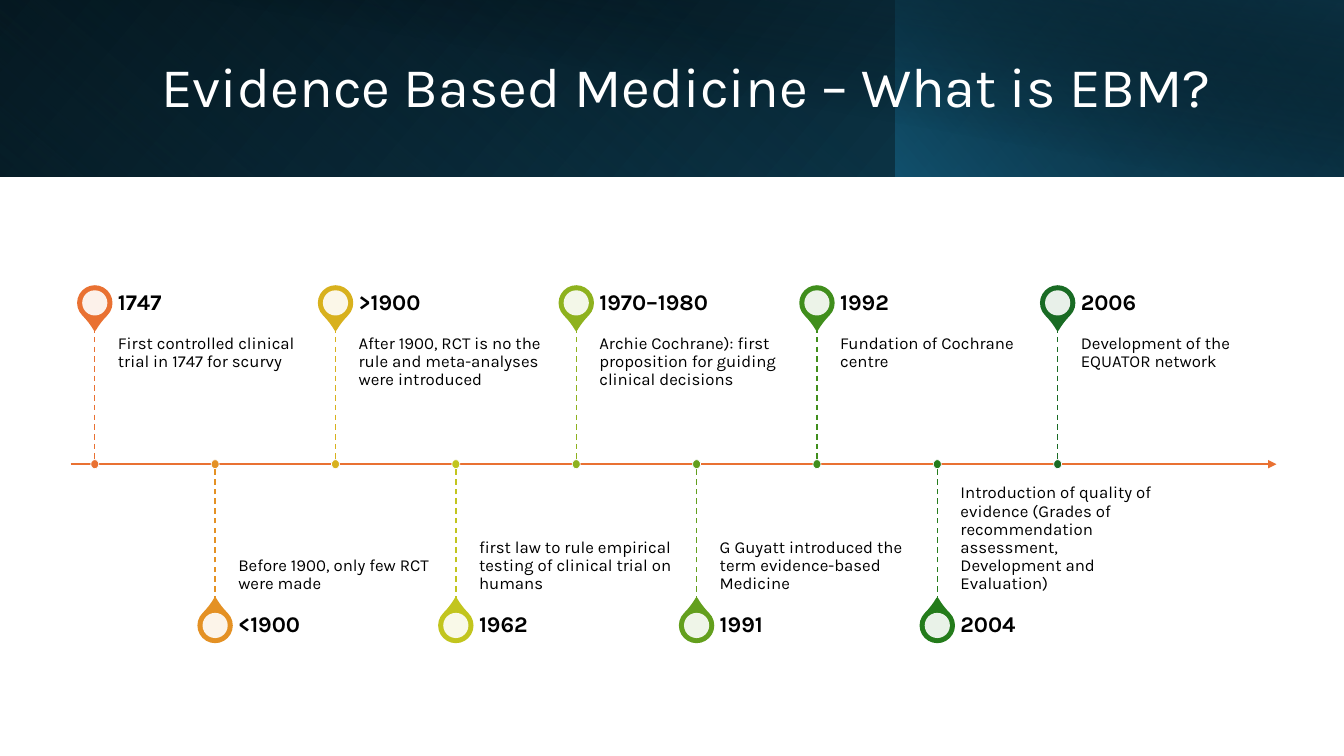
from pptx import Presentation
from pptx.dml.color import RGBColor
from pptx.enum.dml import MSO_LINE
from pptx.enum.shapes import MSO_CONNECTOR, MSO_SHAPE
from pptx.enum.text import MSO_ANCHOR
from pptx.oxml import parse_xml
from pptx.oxml.ns import nsdecls, qn
from pptx.util import Inches, Pt

RECT, OVAL, TEAR = MSO_SHAPE.RECTANGLE, MSO_SHAPE.OVAL, MSO_SHAPE.TEAR
STRAIGHT = MSO_CONNECTOR.STRAIGHT
DASH = MSO_LINE.DASH
TOP, MIDDLE, BOTTOM = MSO_ANCHOR.TOP, MSO_ANCHOR.MIDDLE, MSO_ANCHOR.BOTTOM

WIDTH, HEIGHT = 13.33, 7.5
FONT = "Karla"
COLORS = {
    "white": "FFFFFF", "black": "000000", "axis": "E97132",
    "teal": "104862", "blue": "156082", "navy": "0B3041",
}

# Year, description, colour; events alternate above and below the axis
EVENTS = [
    ("1747", "First controlled clinical trial in 1747 for scurvy", "E97132"),
    ("<1900", "Before 1900, only few RCT were made", "E49124"),
    (">1900", "After 1900, RCT is no the rule and meta-analyses were introduced", "D8B11D"),
    ("1962", "first law to rule empirical testing of clinical trial on humans", "C2C51E"),
    ("1970–1980", "Archie Cochrane): first proposition for guiding clinical decisions", "8EB21E"),
    ("1991", "G Guyatt introduced the term evidence-based Medicine", "639F1D"),
    ("1992", "Fundation of Cochrane centre", "408E1C"),
    ("2004", "Introduction of quality of evidence (Grades of recommendation "
             "assessment, Development and Evaluation)", "247C1B"),
    ("2006", "Development of the EQUATOR network", "196B24"),
]


def add_shape(shapes, kind, box, fill=None, line=None, line_width=1.0):
    shape = shapes.add_shape(kind, *map(Inches, box))
    shape.shadow.inherit = False
    if fill:
        shape.fill.solid()
        shape.fill.fore_color.rgb = RGBColor.from_string(fill)
    else:
        shape.fill.background()
    if line:
        shape.line.color.rgb = RGBColor.from_string(line)
        shape.line.width = Pt(line_width)
    else:
        shape.line.fill.background()
    return shape


def add_round(shapes, x, y, width, height, fill, line=None, line_width=1.0):
    """Ellipse centred on a point."""
    box = (x - width / 2, y - height / 2, width, height)
    return add_shape(shapes, OVAL, box, fill, line, line_width)


def add_line(shapes, start, end, color, width):
    line = shapes.add_connector(STRAIGHT, *map(Inches, (*start, *end)))
    line.line.color.rgb = RGBColor.from_string(color)
    line.line.width = Pt(width)
    line._element.spPr.append(parse_xml(f"<a:effectLst {nsdecls('a')}/>"))
    return line


def add_text(shapes, box, text, size, color, anchor, insets, bold=False):
    frame = shapes.add_textbox(*map(Inches, box)).text_frame
    frame.word_wrap = True
    frame.vertical_anchor = anchor
    (frame.margin_left, frame.margin_top,
     frame.margin_right, frame.margin_bottom) = map(Inches, insets)
    frame.text = text
    para = frame.paragraphs[0]
    para.line_spacing = 0.9
    font = para.runs[0].font
    font.name, font.size, font.bold = FONT, Pt(size), bold
    font.color.rgb = RGBColor.from_string(color)


def add_gradient(shapes, box, stops, angle, flip=True, rotation=0):
    """Rectangle whose stops are (position, colour name, opacity), in percent."""
    shape = add_shape(shapes, RECT, box)
    shape.rotation = rotation
    properties = shape._element.spPr
    if flip:
        properties.find(qn("a:xfrm")).set("flipH", "1")
    stop_xml = "".join(
        f'<a:gs pos="{position * 1000}"><a:srgbClr val="{COLORS[name]}">'
        f'<a:alpha val="{opacity * 1000}"/></a:srgbClr></a:gs>'
        for position, name, opacity in stops)
    gradient = parse_xml(
        f'<a:gradFill {nsdecls("a")} rotWithShape="1"><a:gsLst>{stop_xml}</a:gsLst>'
        f'<a:lin ang="{angle * 60000}" scaled="0"/></a:gradFill>')
    properties.replace(properties.find(qn("a:noFill")), gradient)


def add_header(page, box):
    left, top, width, height = box
    split = width * 0.666
    shapes = page.shapes
    add_gradient(shapes, box, [(0, "black", 100), (100, "teal", 100)], 140)
    add_gradient(shapes, (left, top, split, height),
                 [(20, "blue", 0), (100, "navy", 55)], 230, rotation=180)
    add_gradient(shapes, (left + split, top, width - split, height),
                 [(0, "blue", 66), (100, "black", 30)], 220)
    add_gradient(shapes, (left + 0.5, top, width - 0.5, height),
                 [(50, "black", 0), (99, "navy", 52)], 280, flip=False)
    add_text(shapes, (left + 1.5, top + 0.32, 10.82, 1.13),
             "Evidence Based Medicine – What is EBM?", 40, COLORS["white"],
             MIDDLE, (0.1, 0.05, 0.1, 0.05))


def add_event(shapes, x, axis_y, above, event):
    """Pin, year, description, stem and axis dot of one event."""
    year, description, color = event
    side = -1 if above else 1
    stem, pin, label_height = 1.36, 0.33, 0.48
    pin_y = axis_y + side * 1.6
    text_left, text_width = x + 0.23, 1.93

    drop = add_shape(shapes, TEAR, (x - pin / 2, pin_y - pin / 2, pin, pin),
                     color, color, 1.5)
    drop.adjustments[0] = 1.15
    drop.rotation = 135 if above else 315
    hole = add_round(shapes, x, pin_y, 0.25, 0.25, COLORS["white"])
    tint = hole._element.spPr.find(qn("a:solidFill"))[0]
    tint.append(parse_xml(f'<a:alpha {nsdecls("a")} val="90000"/>'))

    text_top = axis_y - stem if above else axis_y
    insets = (0, 0.08, 0.08, 0.12) if above else (0, 0.12, 0, 0.08)
    add_text(shapes, (text_left, text_top, text_width, stem), description, 12,
             COLORS["black"], TOP if above else BOTTOM, insets)
    add_text(shapes, (text_left, pin_y - label_height / 2, text_width, label_height),
             year, 16, COLORS["black"], MIDDLE, (0, 0, 0.11, 0), bold=True)

    stem_line = add_line(shapes, (x, axis_y + side * stem), (x, axis_y), color, 1)
    stem_line.line.dash_style = DASH
    add_round(shapes, x, axis_y, 0.08, 0.09, color, COLORS["white"], 0.5)


def add_timeline(page, box):
    left, top, width, height = box
    axis_y = top + height / 2
    shapes = page.shapes.add_group_shape().shapes
    axis = add_line(shapes, (left, axis_y), (left + width, axis_y), COLORS["axis"], 1.5)
    axis.line._get_or_add_ln().append(
        parse_xml(f'<a:tailEnd {nsdecls("a")} type="triangle"/>'))
    first, last = left + 0.24, left + width - 2.17
    pitch = (last - first) / (len(EVENTS) - 1)
    for index, event in enumerate(EVENTS):
        add_event(shapes, first + index * pitch, axis_y, index % 2 == 0, event)


def main():
    deck = Presentation()
    deck.slide_width, deck.slide_height = Inches(WIDTH), Inches(HEIGHT)
    page = deck.slides.add_slide(deck.slide_layouts[6])
    add_header(page, (0, 0, WIDTH, 1.75))
    add_timeline(page, (0.7, 2.77, 11.96, 3.67))
    deck.save("out.pptx")


if __name__ == "__main__":
    main()
